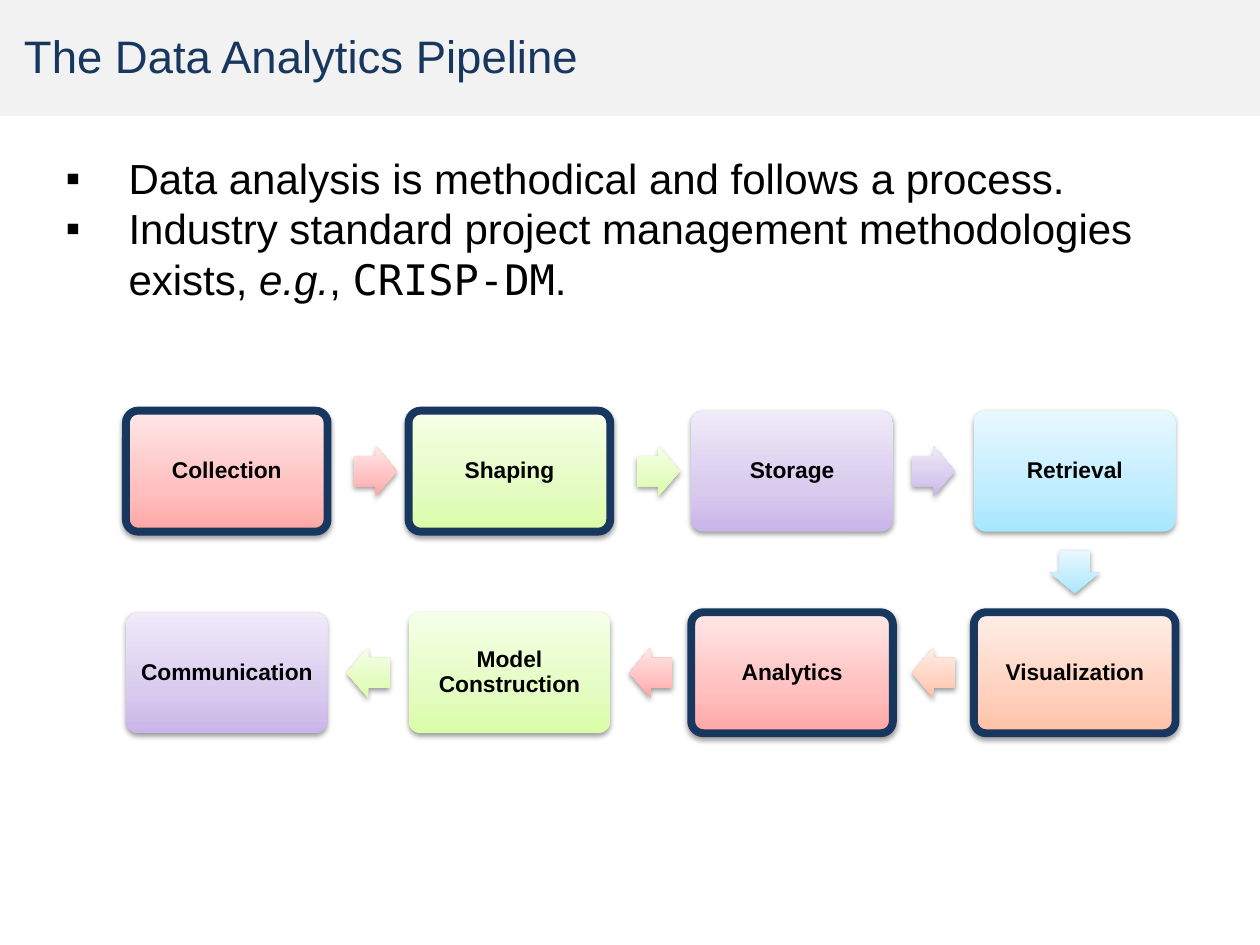
from pptx import Presentation
from pptx.dml.color import RGBColor
from pptx.enum.shapes import MSO_SHAPE as Preset
from pptx.enum.text import MSO_ANCHOR as Anchor, MSO_AUTO_SIZE as AutoSize, PP_ALIGN as Align
from pptx.oxml import parse_xml
from pptx.oxml.ns import nsdecls
from pptx.util import Inches, Pt

COLORS = {"navy": "17375E", "band": "F2F2F2", "text": "000000"}
# Gradient stops from the bottom of a shape to its top
GRADIENTS = {
    "red": ("FFA6A5", "FFC0BF", "FFE7E7"),
    "green": ("DAFDA7", "E4FCC2", "F5FFE7"),
    "purple": ("C9B5E8", "D8CBEE", "F0EAF9"),
    "blue": ("A7E6FF", "C1EDFF", "E7F8FF"),
    "orange": ("FFC1A5", "FFD2C0", "FFEEE7"),
}
STOP_POSITIONS = (0, 35, 100)

# Label, gradient, outlined, shift of the arrow that leaves the stage
STAGES = [
    ("Collection", "red", True, 0.06),
    ("Shaping", "green", True, 0.06),
    ("Storage", "purple", False, 0),
    ("Retrieval", "blue", False, 0),
    ("Visualization", "orange", True, 0),
    ("Analytics", "red", True, 0),
    ("Model Construction", "green", False, 0),
    ("Communication", "purple", False, 0),
]
COLUMNS = 4
STAGE_W, STAGE_H = Inches(1.6), Inches(0.96)
ARROW_W, ARROW_H = Inches(0.34), Inches(0.4)

BULLETS = [
    [("Data analysis is methodical and follows a process.", "plain")],
    [
        ("Industry standard project management methodologies exists, ", "plain"),
        ("e.g.", "italic"),
        (", ", "plain"),
        ("CRISP-DM", "mono"),
        (".", "plain"),
    ],
]


def rgb(name):
    return RGBColor.from_string(COLORS[name])


def add_run(paragraph, text, size, color, font="Arial"):
    run = paragraph.add_run()
    run.text = text
    run.font.name, run.font.size = font, Pt(size)
    run.font.color.rgb = rgb(color)
    return run


def place(shape, left, top, width, height):
    shape.left, shape.top, shape.width, shape.height = left, top, width, height


def shade(shape, gradient):
    """Give a shape an upright three-stop gradient and a soft shadow below."""
    stops = "".join(
        f'<a:gs pos="{position * 1000}"><a:srgbClr val="{color}"/></a:gs>'
        for position, color in zip(STOP_POSITIONS, GRADIENTS[gradient])
    )
    shape.fill.gradient()
    properties = shape.fill._xPr
    properties.replace(properties.gradFill, parse_xml(
        f'<a:gradFill {nsdecls("a")} rotWithShape="0"><a:gsLst>{stops}</a:gsLst>'
        '<a:lin ang="16200000" scaled="0"/></a:gradFill>'
    ))
    properties.append(parse_xml(
        f'<a:effectLst {nsdecls("a")}><a:outerShdw blurRad="{Pt(3.1)}" dist="{Pt(1.6)}" '
        'dir="5400000" rotWithShape="0"><a:srgbClr val="000000"><a:alpha val="38000"/>'
        '</a:srgbClr></a:outerShdw></a:effectLst>'
    ))


def add_header(slide, left, top, width, height):
    band = slide.shapes.add_shape(Preset.RECTANGLE, left, top, width, height)
    band.shadow.inherit = False
    band.fill.solid()
    band.fill.fore_color.rgb = rgb("band")
    band.line.fill.background()
    slide.shapes._spTree.insert(2, band._element)  # behind the title

    title = slide.shapes.title
    place(title, left + Inches(0.09), top + Inches(0.21), Inches(9.85), Inches(0.46))
    title.text_frame.vertical_anchor = Anchor.MIDDLE
    paragraph = title.text_frame.paragraphs[0]
    paragraph.alignment = Align.LEFT
    add_run(paragraph, "The Data Analytics Pipeline", 26, "navy")


def add_bullets(slide, left, top, width, height):
    body = slide.placeholders[1]
    place(body, left, top, width, height)
    frame = body.text_frame
    frame.auto_size = AutoSize.SHAPE_TO_FIT_TEXT
    for index, runs in enumerate(BULLETS):
        paragraph = frame.add_paragraph() if index else frame.paragraphs[0]
        paragraph.space_before = Pt(0)
        properties = paragraph._p.get_or_add_pPr()
        properties.set("marL", str(Inches(0.5)))
        properties.set("indent", str(-Inches(0.5)))
        properties.append(parse_xml(f'<a:buFont {nsdecls("a")} typeface="Arial"/>'))
        properties.append(parse_xml(f'<a:buChar {nsdecls("a")} char="▪"/>'))
        for text, style in runs:
            font = "DejaVu Sans Mono" if style == "mono" else "Arial"
            run = add_run(paragraph, text, 24, "text", font)
            if style == "italic":
                run.font.italic = True


def add_stage(slide, left, top, label, gradient, outlined):
    stage = slide.shapes.add_shape(Preset.ROUNDED_RECTANGLE, left, top, STAGE_W, STAGE_H)
    stage.adjustments[0] = 0.1
    if outlined:
        stage.line.color.rgb = rgb("navy")
        stage.line.width = Pt(4.5)
    else:
        stage.line.fill.background()
    shade(stage, gradient)
    frame = stage.text_frame
    frame.word_wrap = True
    frame.vertical_anchor = Anchor.MIDDLE
    frame.margin_left = frame.margin_right = Inches(0.08)
    paragraph = frame.paragraphs[0]
    paragraph.alignment = Align.CENTER
    paragraph.line_spacing = 0.9
    add_run(paragraph, label, 13, "text").font.bold = True


def add_arrow(slide, center_x, center_y, rotation, gradient):
    arrow = slide.shapes.add_shape(
        Preset.RIGHT_ARROW, center_x - ARROW_W // 2, center_y - ARROW_H // 2, ARROW_W, ARROW_H
    )
    arrow.adjustments[0], arrow.adjustments[1] = 0.6, 0.5
    arrow.rotation = rotation
    arrow.line.fill.background()
    shade(arrow, gradient)


def add_pipeline(slide, left, top, width, height):
    """Run the stages rightwards along the top row, then back along the bottom."""
    step_x = (width - STAGE_W) // (COLUMNS - 1)
    step_y = height - STAGE_H

    def corner(index):
        row, column = divmod(index, COLUMNS)
        if row:
            column = COLUMNS - 1 - column
        return left + column * step_x, top + row * step_y

    for index, (label, gradient, outlined, shift) in enumerate(STAGES):
        x, y = corner(index)
        add_stage(slide, x, y, label, gradient, outlined)
        if index + 1 < len(STAGES):
            next_x, next_y = corner(index + 1)
            rotation = 90 if next_y > y else 0 if next_x > x else 180
            add_arrow(
                slide,
                (x + next_x + STAGE_W) // 2 + Inches(shift),
                (y + next_y + STAGE_H) // 2,
                rotation,
                gradient,
            )


def main():
    deck = Presentation()
    deck.slide_width, deck.slide_height = Inches(10), Inches(7.5)
    slide = deck.slides.add_slide(deck.slide_layouts[1])
    add_header(slide, 0, 0, deck.slide_width, Inches(0.92))
    add_bullets(slide, Inches(0.42), Inches(1.16), Inches(9.25), Inches(1.62))
    add_pipeline(slide, Inches(1), Inches(3.26), Inches(8.33), Inches(2.56))
    deck.save("out.pptx")


if __name__ == "__main__":
    main()
